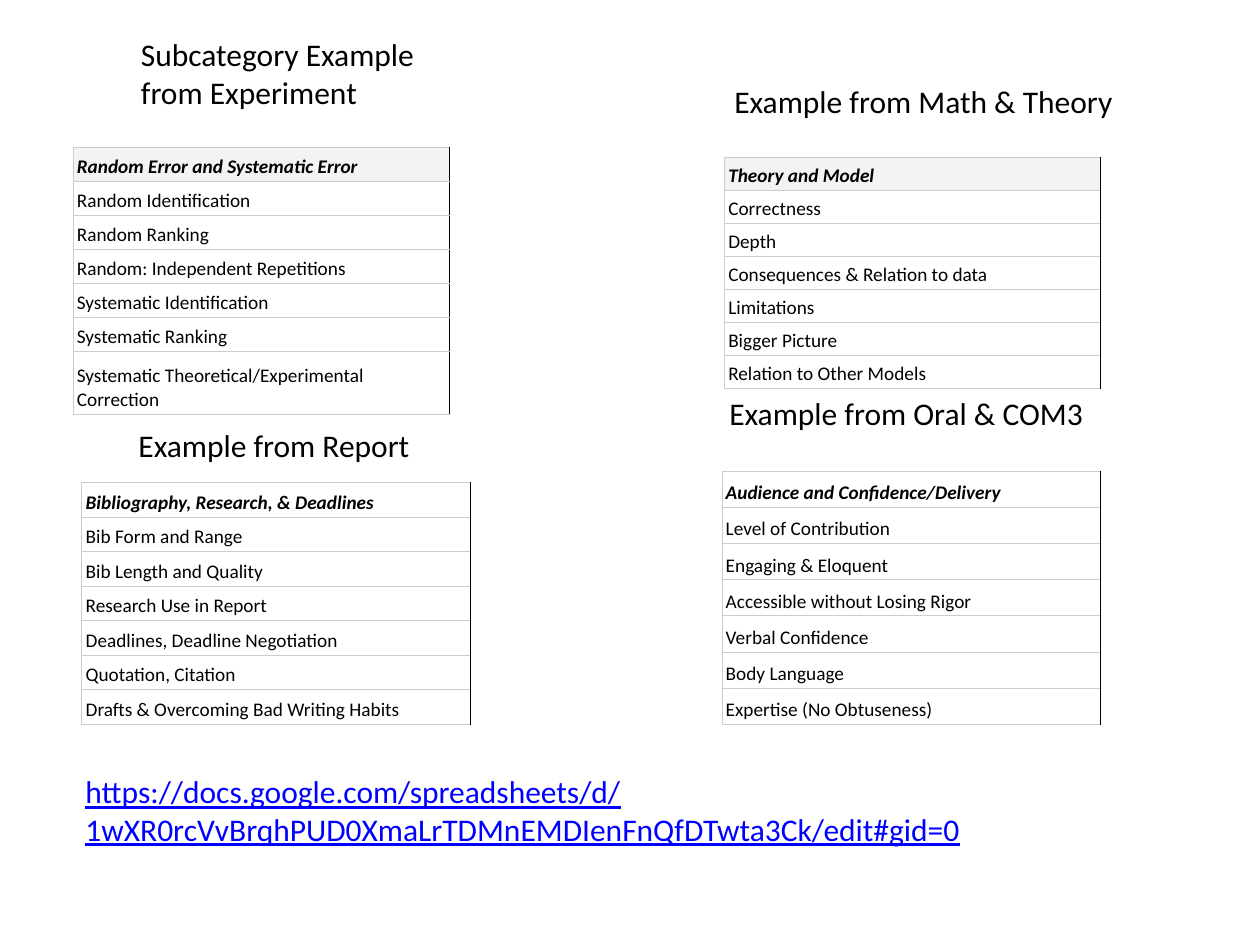
from dataclasses import dataclass

from lxml import etree
from pptx import Presentation
from pptx.dml.color import RGBColor
from pptx.enum.text import MSO_ANCHOR, MSO_AUTO_SIZE
from pptx.oxml.ns import qn
from pptx.util import Inches, Pt

BOTTOM = MSO_ANCHOR.BOTTOM
GROW = MSO_AUTO_SIZE.SHAPE_TO_FIT_TEXT
BLANK_LAYOUT = 6


@dataclass(frozen=True)
class Theme:
    font: str = "Calibri"
    text: str = "000000"
    link: str = "0000FF"
    paper: str = "FFFFFF"
    shade: str = "F3F3F3"
    grid: str = "CCCCCC"
    edge: str = "000000"
    heading_size: float = 18
    cell_size: float = 11
    border_width: float = 0.6


THEME = Theme()

# Each rubric: heading, heading box, table box, header fill, rows
RUBRICS = [
    ("Subcategory Example\nfrom Experiment", (1.02, 0.23, 2.45, 0.71),
     (0.58, 1.17, 2.99, 2.12), THEME.shade,
     ["Random Error and Systematic Error", "Random Identification",
      "Random Ranking", "Random: Independent Repetitions",
      "Systematic Identification", "Systematic Ranking",
      "Systematic Theoretical/Experimental Correction"]),
    ("Example from Report", (1, 3.33, 2.38, 0.4),
     (0.65, 3.83, 3.08, 1.92), THEME.paper,
     ["Bibliography, Research, & Deadlines", "Bib Form and Range",
      "Bib Length and Quality", "Research Use in Report",
      "Deadlines, Deadline Negotiation", "Quotation, Citation",
      "Drafts & Overcoming Bad Writing Habits"]),
    ("Example from Math & Theory", (5.73, 0.6, 3.24, 0.4),
     (5.75, 1.25, 2.98, 1.83), THEME.shade,
     ["Theory and Model", "Correctness", "Depth",
      "Consequences & Relation to data", "Limitations", "Bigger Picture",
      "Relation to Other Models"]),
    ("Example from Oral & COM3", (5.69, 3.08, 3.04, 0.4),
     (5.73, 3.74, 3, 2.01), THEME.paper,
     ["Audience and Confidence/Delivery", "Level of Contribution",
      "Engaging & Eloquent", "Accessible without Losing Rigor",
      "Verbal Confidence", "Body Language", "Expertise (No Obtuseness)"]),
]
WRAPPED_ROW_HEIGHT = 0.5
WRAPPED_LENGTH = 40  # a longer label takes two lines

SHEET_LINK = ("https://docs.google.com/spreadsheets/d/"
              "1wXR0rcVvBrqhPUD0XmaLrTDMnEMDIenFnQfDTwta3Ck/edit#gid=0")


def style_text(frame, size, color, bold=False, italic=False, underline=False):
    for para in frame.paragraphs:
        for span in para.runs:
            font = span.font
            font.name, font.size = THEME.font, Pt(size)
            font.bold, font.italic, font.underline = bold, italic, underline
            font.color.rgb = RGBColor.from_string(color)


def add_text(page, box, text, color, wrap=False, underline=False):
    frame = page.shapes.add_textbox(*map(Inches, box)).text_frame
    frame.word_wrap = wrap
    frame.auto_size = GROW
    frame.text = text
    style_text(frame, THEME.heading_size, color, underline=underline)


def set_borders(cell):
    """Draw grey cell edges with a dark right side."""
    properties = cell._tc.get_or_add_tcPr()
    for side in ("L", "R", "T", "B"):
        line = etree.SubElement(properties, qn(f"a:ln{side}"),
                                w=str(Pt(THEME.border_width)))
        fill = etree.SubElement(line, qn("a:solidFill"))
        color = THEME.edge if side == "R" else THEME.grid
        etree.SubElement(fill, qn("a:srgbClr"), val=color)


def row_heights(labels, total):
    """Share the height evenly among the rows that hold one line."""
    wrapped = [len(label) > WRAPPED_LENGTH for label in labels]
    rest = total - WRAPPED_ROW_HEIGHT * sum(wrapped)
    single = rest / wrapped.count(False)
    return [WRAPPED_ROW_HEIGHT if long else single for long in wrapped]


def add_rubric_table(page, box, labels, header_fill):
    table = page.shapes.add_table(len(labels), 1, *map(Inches, box)).table
    table.first_row = table.horz_banding = False
    heights = row_heights(labels, box[3])
    for index, (label, height) in enumerate(zip(labels, heights)):
        is_header = index == 0
        table.rows[index].height = Inches(height)
        cell = table.cell(index, 0)
        cell.text = label
        cell.vertical_anchor = BOTTOM
        cell.margin_left = cell.margin_right = Inches(0.03)
        cell.margin_top = cell.margin_bottom = Inches(0.02)
        set_borders(cell)
        cell.fill.solid()
        cell.fill.fore_color.rgb = RGBColor.from_string(
            header_fill if is_header else THEME.paper)
        style_text(cell.text_frame, THEME.cell_size, THEME.text,
                   bold=is_header, italic=is_header)


def main():
    deck = Presentation()
    deck.slide_width, deck.slide_height = Inches(10), Inches(7.5)
    page = deck.slides.add_slide(deck.slide_layouts[BLANK_LAYOUT])
    for heading, heading_box, table_box, header_fill, labels in RUBRICS:
        add_rubric_table(page, table_box, labels, header_fill)
        add_text(page, heading_box, heading, THEME.text)
    add_text(page, (0.58, 6.08, 7.5, 0.71), SHEET_LINK, THEME.link,
             wrap=True, underline=True)
    deck.save("out.pptx")


if __name__ == "__main__":
    main()
